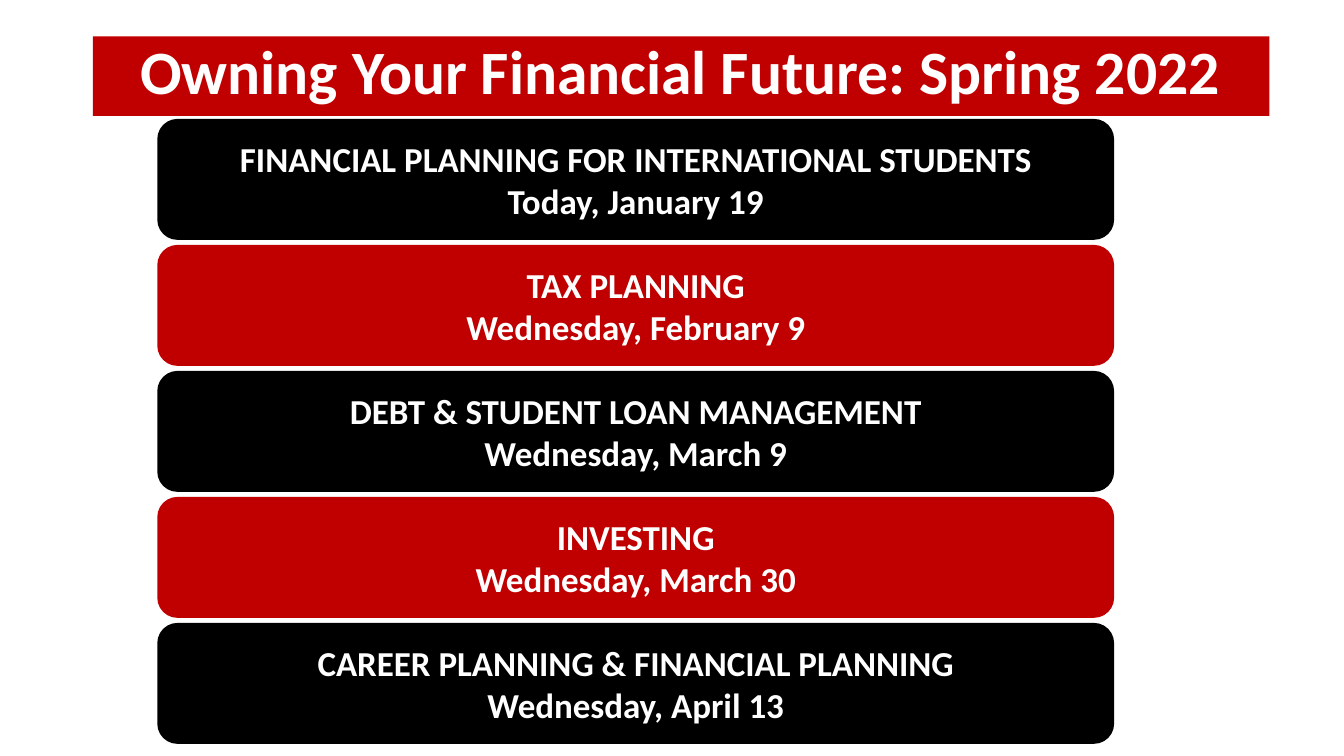
from dataclasses import dataclass

from pptx import Presentation
from pptx.dml.color import RGBColor
from pptx.enum.shapes import MSO_SHAPE
from pptx.enum.text import MSO_ANCHOR, MSO_AUTO_SIZE, PP_ALIGN
from pptx.shapes.autoshape import Shape
from pptx.slide import Slide
from pptx.util import Emu, Pt

EMU_PER_PX = 9144  # 100 px to the inch


@dataclass(frozen=True)
class Theme:
    font: str = "Calibri"
    red: RGBColor = RGBColor(0xC0, 0x00, 0x00)
    black: RGBColor = RGBColor(0x00, 0x00, 0x00)
    white: RGBColor = RGBColor(0xFF, 0xFF, 0xFF)
    title_size: int = 44
    session_size: int = 25


@dataclass(frozen=True)
class Box:
    left: int
    top: int
    width: int
    height: int

    def emu(self) -> tuple[Emu, ...]:
        return tuple(px(n) for n in (self.left, self.top, self.width, self.height))


@dataclass(frozen=True)
class Session:
    topic: str
    date: str


THEME = Theme()
TITLE_BOX = Box(92, 36, 1167, 79)
FIRST_SESSION_BOX = Box(156, 118, 949, 120)
SESSION_PITCH = 125
SESSIONS = (
    Session("FINANCIAL PLANNING FOR INTERNATIONAL STUDENTS", "Today, January 19"),
    Session("TAX PLANNING", "Wednesday, February 9"),
    Session("DEBT & STUDENT LOAN MANAGEMENT", "Wednesday, March 9"),
    Session("INVESTING", "Wednesday, March 30"),
    Session("CAREER PLANNING & FINANCIAL PLANNING", "Wednesday, April 13"),
)


def px(n: int) -> Emu:
    return Emu(n * EMU_PER_PX)


def fill_banner(sp: Shape, text: str, color: RGBColor, size: int, anchor: MSO_ANCHOR) -> None:
    """Give a shape its solid fill and centred bold white text."""
    sp.fill.solid()
    sp.fill.fore_color.rgb = color
    sp.line.fill.background()
    tf = sp.text_frame
    tf.text = text
    tf.word_wrap = True
    tf.auto_size = MSO_AUTO_SIZE.NONE
    tf.vertical_anchor = anchor
    for p in tf.paragraphs:
        p.alignment = PP_ALIGN.CENTER
        for r in p.runs:
            r.font.name = THEME.font
            r.font.size = Pt(size)
            r.font.bold = True
            r.font.color.rgb = THEME.white


def add_title(s: Slide) -> None:
    sp = s.shapes.title
    sp.left, sp.top, sp.width, sp.height = TITLE_BOX.emu()
    fill_banner(sp, "Owning Your Financial Future: Spring 2022",
                THEME.red, THEME.title_size, MSO_ANCHOR.TOP)
    sp.text_frame.paragraphs[0].line_spacing = 0.9


def add_session(s: Slide, index: int, session: Session) -> None:
    first = FIRST_SESSION_BOX
    box = Box(first.left, first.top + index * SESSION_PITCH, first.width, first.height)
    sp = s.shapes.add_shape(MSO_SHAPE.ROUNDED_RECTANGLE, *box.emu())
    sp.shadow.inherit = False
    color = THEME.red if index % 2 else THEME.black
    fill_banner(sp, f"{session.topic}\n{session.date}",
                color, THEME.session_size, MSO_ANCHOR.MIDDLE)


def main() -> None:
    prs = Presentation()
    prs.slide_width, prs.slide_height = px(1333), px(750)
    title_only = prs.slide_layouts[5]
    s = prs.slides.add_slide(title_only)
    add_title(s)
    for index, session in enumerate(SESSIONS):
        add_session(s, index, session)
    prs.save("out.pptx")


if __name__ == "__main__":
    main()
